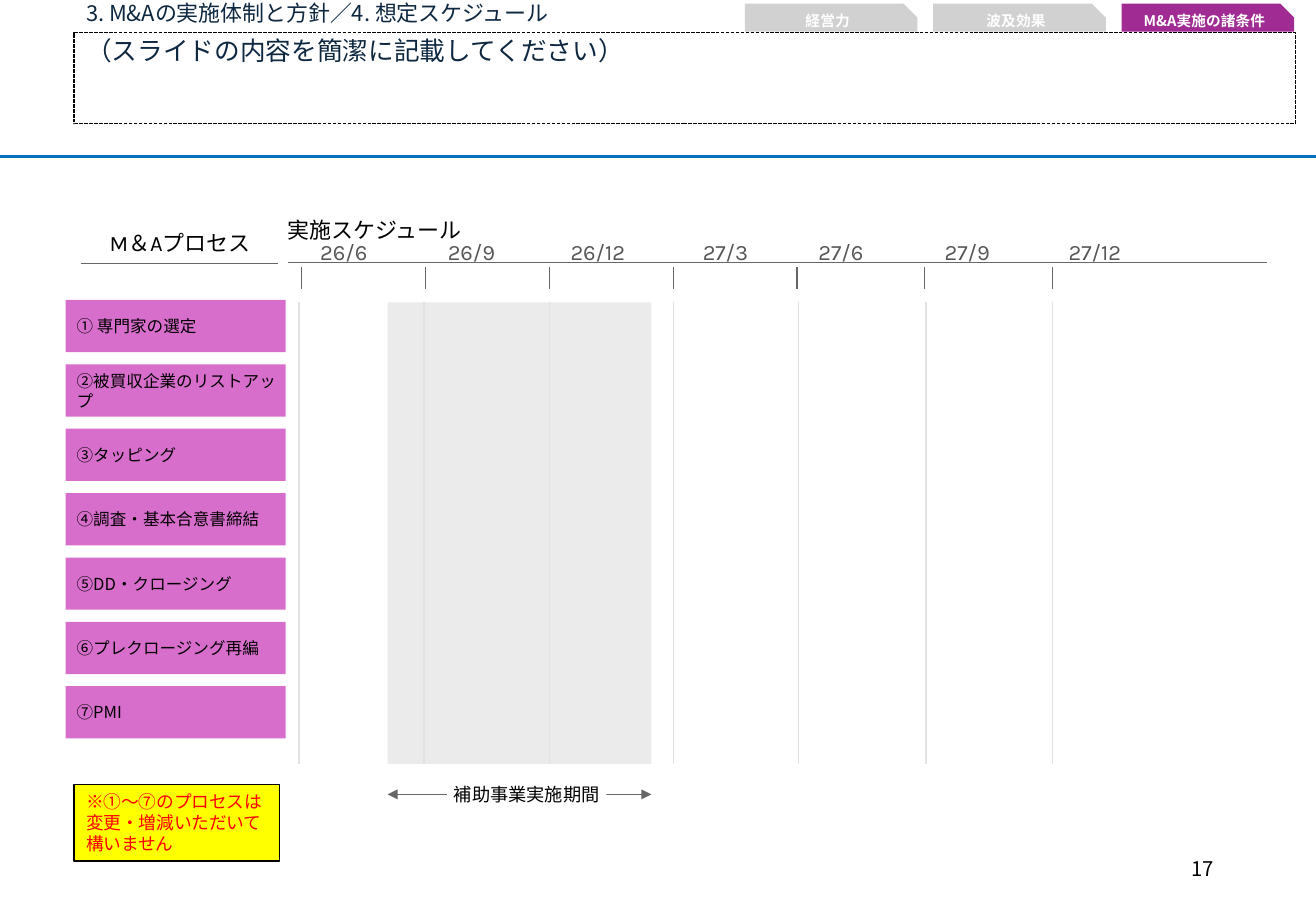
from lxml import etree
from pptx import Presentation
from pptx.dml.color import RGBColor
from pptx.enum.dml import MSO_LINE
from pptx.enum.shapes import MSO_CONNECTOR, MSO_SHAPE
from pptx.enum.text import MSO_ANCHOR, MSO_AUTO_SIZE, PP_ALIGN
from pptx.oxml.ns import qn
from pptx.util import Inches, Pt

JAPANESE = "Noto Sans CJK JP"
LATIN = "Karla"
MONTHS = ["26/6", "26/9", "26/12", "27/3", "27/6", "27/9", "27/12"]
MONTH_LEFTS = [0.11, 1.16, 2.2, 3.25, 4.2, 5.24, 6.29]
TICK_LEFTS = [0.11, 1.13, 2.15, 3.17, 4.19, 5.24, 6.29]
GRID_LEFTS = [0.09, 1.12, 2.15, 3.17, 4.2, 5.25, 6.29]
PROCESSES = ["① 専門家の選定", "②被買収企業のリストアップ", "③タッピング",
             "④調査・基本合意書締結", "⑤DD・クロージング",
             "⑥プレクロージング再編", "⑦PMI"]
TABS = [("経営力", "D1D1D1"), ("波及効果", "D1D1D1"), ("M&A実施の諸条件", "A02B93")]


def color(hex_text):
    return RGBColor.from_string(hex_text)


def set_text(shape, text, size, font=JAPANESE, ink="000000", bold=False,
             align=PP_ALIGN.LEFT, anchor=MSO_ANCHOR.TOP, wrap=True,
             insets=(0.1, 0.05, 0.1, 0.05), spacing=1.0):
    frame = shape.text_frame
    frame.word_wrap = wrap
    frame.vertical_anchor = anchor
    sides = ("margin_left", "margin_top", "margin_right", "margin_bottom")
    for side, inset in zip(sides, insets):
        setattr(frame, side, Inches(inset))
    paragraph = frame.paragraphs[0]
    paragraph.alignment = align
    paragraph.line_spacing = spacing
    run = paragraph.add_run()
    run.text = text
    run.font.color.rgb = color(ink)
    for name, value in {"size": Pt(size), "bold": bold, "name": font}.items():
        setattr(run.font, name, value)
    east_asian = etree.SubElement(run.font._element, qn("a:ea"))
    east_asian.set("typeface", JAPANESE)


def add_text(slide, box, text, size, **options):
    shape = slide.shapes.add_textbox(*map(Inches, box))
    set_text(shape, text, size, **options)
    return shape


def add_block(slide, box, fill=None, line=None, kind=MSO_SHAPE.RECTANGLE):
    shape = slide.shapes.add_shape(kind, *map(Inches, box))
    shape.shadow.inherit = False
    if fill:
        shape.fill.solid()
        shape.fill.fore_color.rgb = color(fill)
    else:
        shape.fill.background()
    if line:
        shape.line.color.rgb = color(line)
        shape.line.width = Pt(0.75)
    else:
        shape.line.fill.background()
    return shape


def add_line(slide, start, end, ink="666666", width=0.75, arrows=False):
    connector = slide.shapes.add_connector(
        MSO_CONNECTOR.STRAIGHT, *map(Inches, (*start, *end)))
    connector.line.color.rgb = color(ink)
    connector.line.width = Pt(width)
    if arrows:
        for tag in ("a:headEnd", "a:tailEnd"):
            arrowhead = etree.SubElement(connector.line._get_or_add_ln(), qn(tag))
            arrowhead.set("type", "triangle")
    etree.SubElement(connector._element.spPr, qn("a:effectLst"))


def add_header(slide, left, top, width):
    add_line(slide, (0, top + 1.32), (10.83, top + 1.32), "0070C0", 2)
    add_text(slide, (left, top, 5.61, 0.3), "3. M&Aの実施体制と方針／4. 想定スケジュール",
             13, ink="0E2841", spacing=0.9)
    summary = add_block(slide, (left, top + 0.3, width, 0.75), line="000000")
    summary.line.dash_style = MSO_LINE.SQUARE_DOT
    set_text(summary, "（スライドの内容を簡潔に記載してください）", 15.2,
             ink="0E2841", spacing=0.9)


def add_tabs(slide, left, top):
    for index, (label, fill) in enumerate(TABS):
        tab = add_block(slide, (left + 1.55 * index, top, 1.42, 0.23), fill,
                        kind=MSO_SHAPE.SNIP_1_RECTANGLE)
        tab.adjustments[0] = 0.5
        set_text(tab, label, 8.7, ink="FFFFFF", bold=True,
                 align=PP_ALIGN.CENTER, anchor=MSO_ANCHOR.MIDDLE)


def add_processes(slide, left, top, width):
    # Column heading
    add_text(slide, (left + 0.13, top, 1.62, 0.05), "M＆Aプロセス", 13, font=LATIN,
             align=PP_ALIGN.CENTER, anchor=MSO_ANCHOR.BOTTOM, insets=(0, 0, 0, 0.04))
    add_line(slide, (left + 0.13, top + 0.07), (left + 1.75, top + 0.07))
    # Process steps
    for index, process in enumerate(PROCESSES):
        step = add_block(slide, (left, top + 0.37 + 0.53 * index, width, 0.43), "D86ECC")
        set_text(step, process, 9.8, anchor=MSO_ANCHOR.MIDDLE,
                 insets=(0.09, 0.04, 0.05, 0.04))
    # Note under the steps
    note = add_block(slide, (left + 0.07, top + 4.36, 1.69, 0.63), "FFFF00", "000000")
    set_text(note, "※①～⑦のプロセスは変更・増減いただいて構いません", 10.5, ink="FF0000")
    note.text_frame.auto_size = MSO_AUTO_SIZE.SHAPE_TO_FIT_TEXT


def add_schedule(slide, left, top, width):
    grid_top, grid_bottom = top + 0.39, top + 4.19
    # Subsidised period
    period_left, period_width = left + 0.82, 2.17
    period = add_block(slide, (period_left, grid_top, period_width, 3.8), "BFBFBF")
    fill_color = period._element.spPr.find(qn("a:solidFill"))[0]
    etree.SubElement(fill_color, qn("a:alpha")).set("val", "30000")
    # Heading above the month labels, and axis
    add_text(slide, (left, top - 0.4, width, 0.3), "実施スケジュール", 13, font=LATIN,
             anchor=MSO_ANCHOR.BOTTOM, insets=(0, 0, 0, 0))
    add_line(slide, (left, top + 0.06), (left + width, top + 0.06))
    # Months, ticks and grid lines
    for month, label_x, tick_x, grid_x in zip(MONTHS, MONTH_LEFTS, TICK_LEFTS, GRID_LEFTS):
        add_line(slide, (left + tick_x, top + 0.1), (left + tick_x, top + 0.28))
        add_line(slide, (left + grid_x, grid_top), (left + grid_x, grid_bottom), "E2E2E2")
        add_text(slide, (left + label_x, top - 0.15, 0.7, 0.24), month, 13, font=LATIN,
                 ink="575757", align=PP_ALIGN.CENTER, anchor=MSO_ANCHOR.MIDDLE,
                 wrap=False, insets=(0.11, 0.05, 0.11, 0.05))
    # Period arrow and label
    arrow_y = grid_bottom + 0.25
    add_line(slide, (period_left, arrow_y), (period_left + period_width, arrow_y),
             arrows=True)
    label = add_block(slide, (period_left + 0.49, arrow_y - 0.18, 1.31, 0.35), "FFFFFF")
    set_text(label, "補助事業実施期間", 10.8, font=LATIN, align=PP_ALIGN.CENTER,
             anchor=MSO_ANCHOR.MIDDLE, wrap=False, insets=(0.09, 0.04, 0.09, 0.04))


def main():
    presentation = Presentation()
    presentation.slide_width = Inches(10.83)
    presentation.slide_height = Inches(7.5)
    slide = presentation.slides.add_slide(presentation.slide_layouts[6])
    add_header(slide, 0.61, -0.03, 10.05)
    add_processes(slide, 0.54, 2.1, 1.81)
    add_schedule(slide, 2.37, 2.1, 8.06)
    add_tabs(slide, 6.13, 0.03)
    # Page number
    add_text(slide, (7.65, 6.95, 2.44, 0.4), "17", 12, align=PP_ALIGN.RIGHT,
             anchor=MSO_ANCHOR.MIDDLE)
    presentation.save("out.pptx")


if __name__ == "__main__":
    main()
